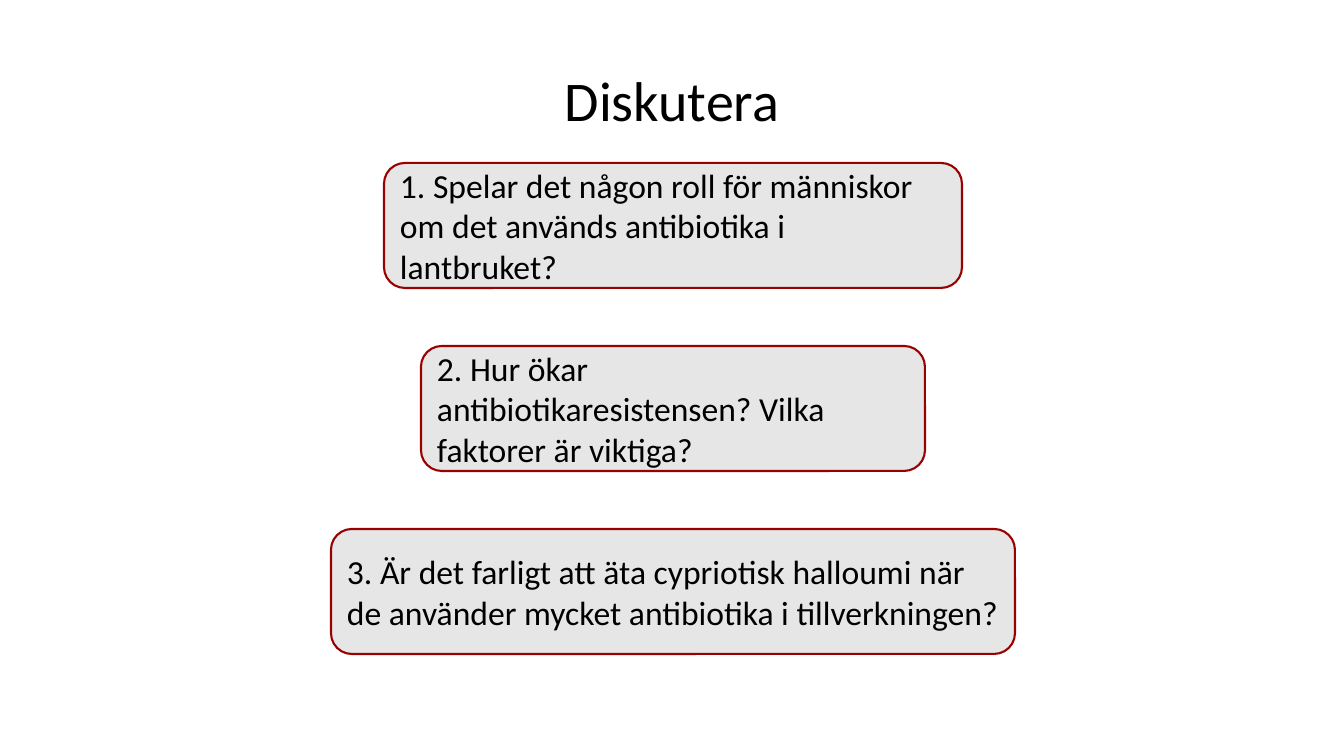
"""Builds the discussion slide: a title above three centred question boxes."""
from pptx import Presentation
from pptx import util as u
from pptx.dml.color import RGBColor
from pptx.enum import shapes, text

HEADING = "Diskutera"
QUESTIONS = [
    ("1. Spelar det någon roll för människor om det används antibiotika i lantbruket?", 578),
    ("2. Hur ökar antibiotikaresistensen? Vilka faktorer är viktiga?", 504),
    ("3. Är det farligt att äta cypriotisk halloumi när de använder mycket antibiotika i tillverkningen?", 684),
]
HEADING_BOX = (497, 60, 350, 78)
CENTRE, FIRST_TOP, STEP, HEIGHT = 673, 163, 183, 125
HEADING_FONT = {"name": "Calibri", "size": u.Pt(40)}
QUESTION_FONT = {"name": "Calibri", "size": u.Pt(24)}
BLACK, GREY, RED = "000000", "E6E6E6", "990000"


def px(length):
    return u.Emu(round(length * 914400 / 100.8))


def colour(value):
    return RGBColor.from_string(value)


def write(shape, words, font, align, anchor):
    frame = shape.text_frame
    frame.text = words
    frame.word_wrap = True
    frame.auto_size = text.MSO_AUTO_SIZE.NONE
    frame.vertical_anchor = anchor
    paragraph = frame.paragraphs[0]
    paragraph.alignment = align
    run = paragraph.runs[0]
    for key, value in font.items():
        setattr(run.font, key, value)
    run.font.color.rgb = colour(BLACK)


def main():
    deck = Presentation()
    deck.slide_width, deck.slide_height = px(1344), px(756)
    slide = deck.slides.add_slide(deck.slide_layouts.get_by_name("Title Only"))

    heading = slide.shapes.title
    for side, length in zip(("left", "top", "width", "height"), HEADING_BOX):
        setattr(heading, side, px(length))
    write(heading, HEADING, HEADING_FONT, text.PP_ALIGN.CENTER, text.MSO_ANCHOR.TOP)

    for row, (words, width) in enumerate(QUESTIONS):
        question = slide.shapes.add_shape(
            shapes.MSO_SHAPE.ROUNDED_RECTANGLE,
            px(CENTRE - width / 2), px(FIRST_TOP + row * STEP), px(width), px(HEIGHT))
        question.shadow.inherit = False
        question.fill.solid()
        question.fill.fore_color.rgb = colour(GREY)
        question.line.color.rgb = colour(RED)
        question.line.width = u.Pt(1.5)
        write(question, words, QUESTION_FONT, text.PP_ALIGN.LEFT, text.MSO_ANCHOR.MIDDLE)

    deck.save("out.pptx")


if __name__ == "__main__":
    main()
